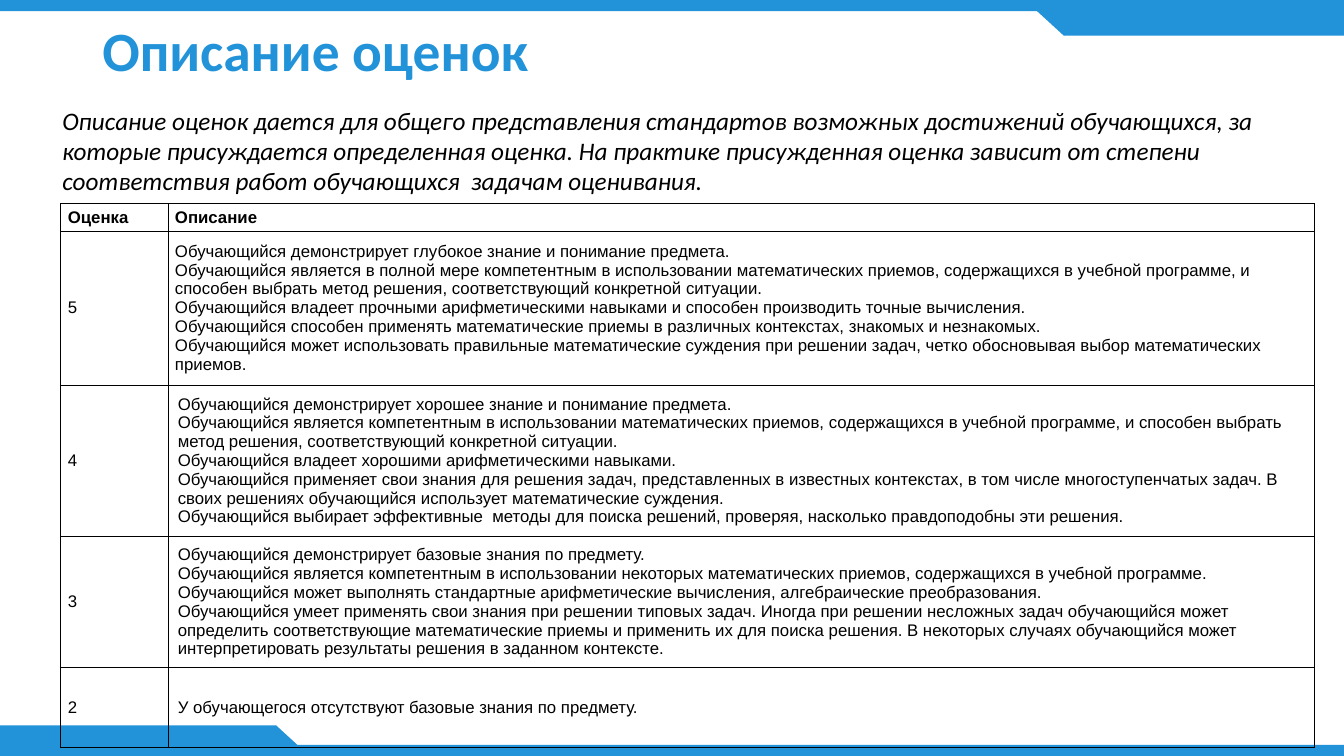
from lxml.etree import SubElement
from pptx import Presentation
from pptx.dml.color import RGBColor
from pptx.enum.shapes import MSO_SHAPE as Preset
from pptx.enum.text import MSO_ANCHOR as Anchor
from pptx.oxml.ns import qn
from pptx.util import Cm, Pt

BLUE = RGBColor(0x23, 0x93, 0xD9)
BLACK = RGBColor(0, 0, 0)

TITLE_FORMAT = {"name": "Calibri", "size": Pt(39.6), "bold": True}
INTRO_FORMAT = {"name": "Calibri", "size": Pt(18), "italic": True}
HEAD_FORMAT = {"name": "Arial", "size": Pt(12), "bold": True}
BODY_FORMAT = {"name": "Arial", "size": Pt(12), "bold": False}

TIGHT = {"margin_left": Cm(0.18), "margin_right": Cm(0.18),
         "margin_top": Cm(0.08), "margin_bottom": Cm(0.08)}
ROOMY = {"margin_left": Cm(0.25), "margin_right": Cm(0.25),
         "margin_top": Cm(0.13), "margin_bottom": Cm(0.13)}

INTRO = ("Описание оценок дается для общего представления стандартов возможных "
         "достижений обучающихся, за которые присуждается определенная оценка. "
         "На практике присужденная оценка зависит от степени соответствия работ "
         "обучающихся  задачам оценивания.")

COLUMN_WIDTHS = [2.7, 28.9]
ROW_HEIGHTS = [0.69, 3.88, 3.81, 3.3, 2]
GRADES = [
    ("Оценка", ["Описание"]),
    ("5", [
        "Обучающийся демонстрирует глубокое знание и понимание предмета.",
        "Обучающийся является в полной мере компетентным в использовании "
        "математических приемов, содержащихся в учебной программе, и способен "
        "выбрать метод решения, соответствующий конкретной ситуации.",
        "Обучающийся владеет прочными арифметическими навыками и способен "
        "производить точные вычисления.",
        "Обучающийся способен применять математические приемы в различных "
        "контекстах, знакомых и незнакомых.",
        "Обучающийся может использовать правильные математические суждения при "
        "решении задач, четко обосновывая выбор математических приемов.",
    ]),
    ("4", [
        "Обучающийся демонстрирует хорошее знание и понимание предмета.",
        "Обучающийся является компетентным в использовании математических "
        "приемов, содержащихся в учебной программе, и способен выбрать метод "
        "решения, соответствующий конкретной ситуации.",
        "Обучающийся владеет хорошими арифметическими навыками.",
        "Обучающийся применяет свои знания для решения задач, представленных в "
        "известных контекстах, в том числе многоступенчатых задач. В своих "
        "решениях обучающийся использует математические суждения.",
        "Обучающийся выбирает эффективные  методы для поиска решений, проверяя, "
        "насколько правдоподобны эти решения.",
    ]),
    ("3", [
        "Обучающийся демонстрирует базовые знания по предмету.",
        "Обучающийся является компетентным в использовании некоторых "
        "математических приемов, содержащихся в учебной программе.",
        "Обучающийся может выполнять стандартные арифметические вычисления, "
        "алгебраические преобразования.",
        "Обучающийся умеет применять свои знания при решении типовых задач. "
        "Иногда при решении несложных задач обучающийся может определить "
        "соответствующие математические приемы и применить их для поиска решения. "
        "В некоторых случаях обучающийся может интерпретировать результаты "
        "решения в заданном контексте.",
    ]),
    ("2", ["У обучающегося отсутствуют базовые знания по предмету."]),
]


def apply(target, values):
    for name, value in values.items():
        setattr(target, name, value)


def write(frame, lines, values, color):
    for index, line in enumerate(lines):
        para = frame.paragraphs[0] if index == 0 else frame.add_paragraph()
        span = para.add_run()
        span.text = line
        apply(span.font, values)
        span.font.color.rgb = color


def add_band(page, preset, left, top, width, height, rotation=0):
    band = page.shapes.add_shape(preset, Cm(left), Cm(top), Cm(width), Cm(height))
    band.shadow.inherit = False
    band.fill.solid()
    band.fill.fore_color.rgb = BLUE
    band.line.fill.background()
    band.rotation = rotation


def add_text(page, area, text, values, color, anchor):
    box = page.shapes.add_textbox(*map(Cm, area))
    box.text_frame.word_wrap = True
    box.text_frame.vertical_anchor = anchor
    write(box.text_frame, [text], values, color)


def add_borders(cell):
    properties = cell._tc.get_or_add_tcPr()
    for side in ("lnL", "lnR", "lnT", "lnB"):
        line = SubElement(properties, qn(f"a:{side}"), w=str(Pt(0.5)))
        fill = SubElement(line, qn("a:solidFill"))
        SubElement(fill, qn("a:srgbClr"), val=str(BLACK))


def fill_cell(cell, lines, values, margins):
    add_borders(cell)
    cell.fill.background()
    cell.vertical_anchor = Anchor.MIDDLE
    apply(cell, margins)
    write(cell.text_frame, lines, values, BLACK)


def add_grades(page, left, top):
    frame = page.shapes.add_table(
        len(GRADES), len(COLUMN_WIDTHS), Cm(left), Cm(top),
        Cm(sum(COLUMN_WIDTHS)), Cm(sum(ROW_HEIGHTS)))
    table = frame.table
    apply(table, {"first_row": False, "horz_banding": False})
    for column, width in zip(table.columns, COLUMN_WIDTHS):
        column.width = Cm(width)
    for index, (grade, lines) in enumerate(GRADES):
        table.rows[index].height = Cm(ROW_HEIGHTS[index])
        values = HEAD_FORMAT if index == 0 else BODY_FORMAT
        fill_cell(table.cell(index, 0), [grade], values, TIGHT)
        fill_cell(table.cell(index, 1), lines, values, TIGHT if index < 2 else ROOMY)


def main():
    deck = Presentation()
    deck.slide_width, deck.slide_height = Cm(33.87), Cm(19.05)
    page = deck.slides.add_slide(deck.slide_layouts[6])
    add_band(page, Preset.RECTANGLE, 0, 0, 33.87, 0.28)
    add_band(page, Preset.RECTANGLE, 0, 18.77, 33.87, 0.28)
    add_band(page, Preset.RECTANGLE, 26.81, 0.13, 7.06, 0.77)
    add_band(page, Preset.FLOWCHART_MERGE, 25.97, 0.13, 1.68, 0.77)
    add_band(page, Preset.RECTANGLE, 0, 18.28, 6.96, 0.77)
    add_band(page, Preset.FLOWCHART_MERGE, 6.12, 18.28, 1.68, 0.77, 180)
    add_text(page, (2.33, 0.25, 23, 2), "Описание оценок",
             TITLE_FORMAT, BLUE, Anchor.MIDDLE)
    add_text(page, (1.32, 2.52, 31.6, 2.56), INTRO, INTRO_FORMAT, BLACK, Anchor.TOP)
    add_grades(page, 1.53, 5.13)
    deck.save("out.pptx")


if __name__ == "__main__":
    main()
